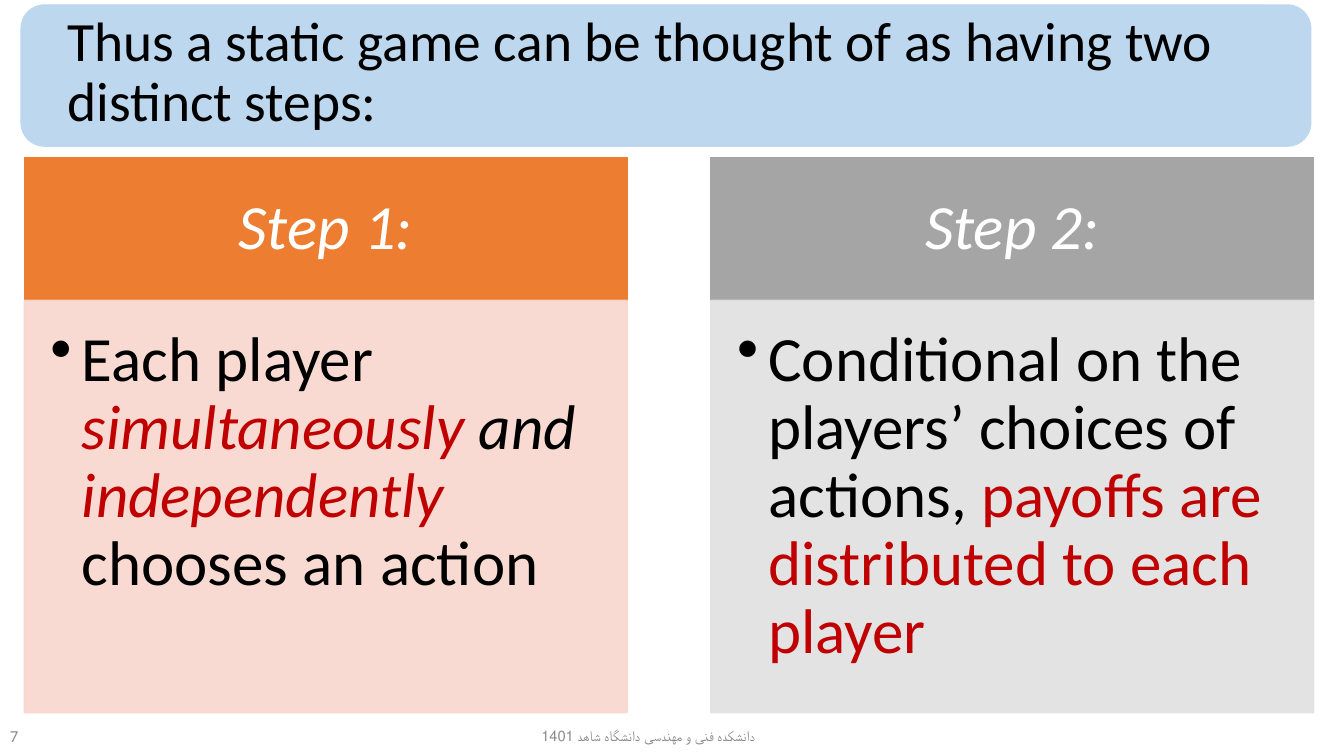
from dataclasses import dataclass

from lxml import etree
from pptx import Presentation
from pptx.dml.color import RGBColor
from pptx.enum.shapes import MSO_SHAPE
from pptx.enum.text import MSO_ANCHOR, PP_ALIGN
from pptx.oxml.ns import qn
from pptx.util import Inches, Pt

RECT, ROUND = MSO_SHAPE.RECTANGLE, MSO_SHAPE.ROUNDED_RECTANGLE
TOP, MIDDLE = MSO_ANCHOR.TOP, MSO_ANCHOR.MIDDLE
LEFT, CENTER = PP_ALIGN.LEFT, PP_ALIGN.CENTER


@dataclass(frozen=True)
class Theme:
    font: str = "Calibri"
    ink: str = "000000"
    white: str = "FFFFFF"
    accent: str = "C00000"
    muted: str = "8C8C8C"
    banner: str = "BDD7EE"
    title: float = 39.6
    step: float = 45
    page: float = 12
    foot: float = 10.5


THEME = Theme()

STEPS = [
    ("Step 1:", "ED7D31", "F8D7CE", [
        ("Each player ", THEME.ink, False),
        ("simultaneously", THEME.accent, True),
        (" and ", THEME.ink, True),
        ("independently ", THEME.accent, True),
        ("chooses an action", THEME.ink, False),
    ]),
    ("Step 2:", "A5A5A5", "E1E1E1", [
        ("Conditional on the players’ choices of actions, ", THEME.ink, False),
        ("payoffs are distributed to each player", THEME.accent, False),
    ]),
]


def write(shape, runs, size, align=LEFT, anchor=MIDDLE,
          inset=(0.1, 0.05, 0.1, 0.05), spacing=1.0, bullet=False):
    frame = shape.text_frame
    frame.word_wrap = True
    frame.vertical_anchor = anchor
    (frame.margin_left, frame.margin_top,
     frame.margin_right, frame.margin_bottom) = map(Inches, inset)
    para = frame.paragraphs[0]
    para.alignment = align
    para.line_spacing = spacing
    if bullet:
        props = para._p.get_or_add_pPr()
        props.set("marL", str(Inches(0.31)))
        props.set("indent", str(-Inches(0.31)))
        etree.SubElement(props, qn("a:buChar"), char="•")
    for index, (text, color, italic) in enumerate(runs):
        for part, line in enumerate(text.split("\n")):
            if part:
                para.add_line_break()
            run = para.add_run()
            run.text = line
            run.font.name = THEME.font
            run.font.size = Pt(size)
            run.font.italic = italic
            run.font.color.rgb = RGBColor.from_string(color)


def block(slide, kind, box, color, alpha=100):
    shape = slide.shapes.add_shape(kind, *map(Inches, box))
    shape.shadow.inherit = False
    shape.fill.solid()
    shape.fill.fore_color.rgb = RGBColor.from_string(color)
    shape.line.color.rgb = RGBColor.from_string(color)
    shape.line.width = Pt(1)
    if alpha < 100:
        for tint in shape._element.spPr.iter(qn("a:srgbClr")):
            etree.SubElement(tint, qn("a:alpha"), val=str(alpha * 1000))
    return shape


def label(slide, box, text, size, color, **style):
    area = slide.shapes.add_textbox(*map(Inches, box))
    write(area, [(text, color, False)], size, **style)


def banner(slide, box):
    x, y, w, h = box
    block(slide, ROUND, box, THEME.banner)
    label(slide, (x + 0.36, y + 0.23, w - 0.03, h - 0.5),
          "Thus a static game can be thought of as having two\ndistinct steps:",
          THEME.title, THEME.ink, spacing=0.9)


def panel(slide, box, step):
    x, y, w, h = box
    name, dark, pale, runs = step
    head = 1.42
    cap = block(slide, RECT, (x, y, w, head), dark)
    write(cap, [(name, THEME.white, True)], THEME.step, align=CENTER,
          inset=(0.35, 0.2, 0.35, 0.2), spacing=0.9)
    body = block(slide, RECT, (x, y + head, w, h - head), pale, alpha=90)
    write(body, runs, THEME.step, anchor=TOP,
          inset=(0.26, 0.26, 0.35, 0.39), spacing=0.9, bullet=True)


def columns(slide, box):
    x, y, w, h = box
    gap = 0.83
    width = (w - gap * (len(STEPS) - 1)) / len(STEPS)
    for index, step in enumerate(STEPS):
        panel(slide, (x + index * (width + gap), y, width, h), step)


def footer(slide, box):
    x, y, w, h = box
    label(slide, (x, y, 0.71, h), "7", THEME.page, THEME.muted)
    label(slide, (x + 4.18, y, 4.5, h),
          "دانشکده فنی و مهندسی دانشگاه شاهد 1401",
          THEME.foot, THEME.muted, align=CENTER)


def main():
    deck = Presentation()
    deck.slide_width, deck.slide_height = Inches(13.33), Inches(7.5)
    slide = deck.slides.add_slide(deck.slide_layouts[6])
    banner(slide, (0.21, 0.05, 12.79, 1.4))
    columns(slide, (0.24, 1.56, 12.79, 5.51))
    footer(slide, (0, 7.1, 13.33, 0.4))
    deck.save("out.pptx")


if __name__ == "__main__":
    main()
